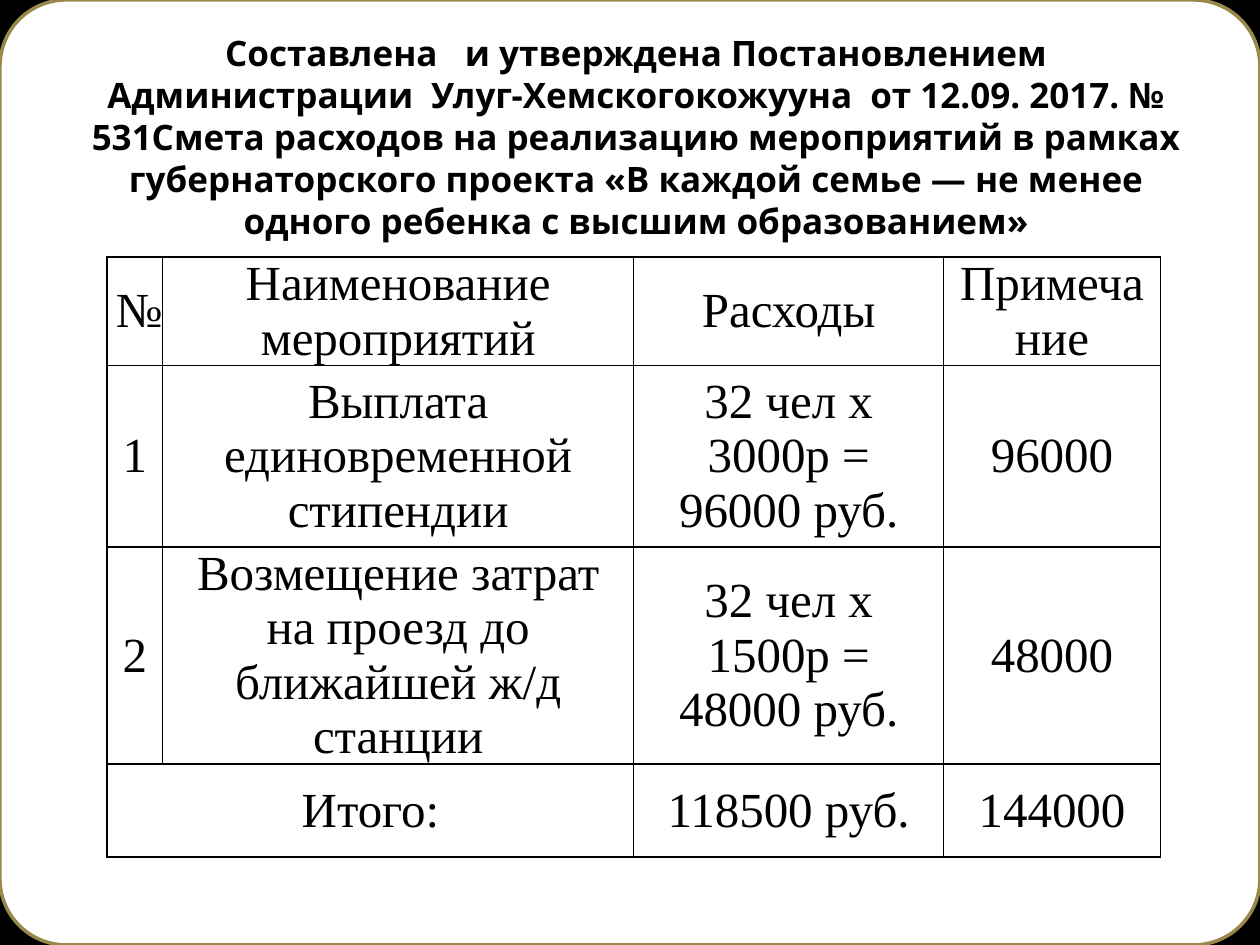
"""Build the slide with the budget table for the student grant project."""
from dataclasses import dataclass

from lxml import etree
from pptx import Presentation
from pptx.dml.color import RGBColor
from pptx.enum.shapes import MSO_SHAPE
from pptx.enum.text import MSO_ANCHOR, MSO_AUTO_SIZE, PP_ALIGN
from pptx.oxml.ns import qn
from pptx.util import Inches, Pt

ROUND = MSO_SHAPE.ROUNDED_RECTANGLE
MIDDLE = MSO_ANCHOR.MIDDLE
CENTER = PP_ALIGN.CENTER
NO_FIT = MSO_AUTO_SIZE.NONE


@dataclass(frozen=True)
class Theme:
    black: RGBColor = RGBColor(0, 0, 0)
    white: RGBColor = RGBColor(255, 255, 255)
    gold: RGBColor = RGBColor(0x98, 0x89, 0x4B)
    head: str = "Open Sans"
    body: str = "Times New Roman"
    head_size: Pt = Pt(20)
    body_size: Pt = Pt(28)
    rule: Pt = Pt(1)
    edge: Pt = Pt(2)


theme = Theme()


def style(para, face, size, bold):
    para.alignment = CENTER
    para.font.name = face
    para.font.size = size
    para.font.bold = bold
    para.font.color.rgb = theme.black


def rule(cell):
    props = cell._tc.get_or_add_tcPr()
    for i, side in enumerate(("lnL", "lnR", "lnT", "lnB")):
        line = etree.Element(qn("a:" + side), w=str(theme.rule))
        fill = etree.SubElement(line, qn("a:solidFill"))
        etree.SubElement(fill, qn("a:srgbClr"), val=str(theme.black))
        props.insert(i, line)


deck = Presentation()
deck.slide_width = Inches(10)
deck.slide_height = Inches(7.5)
slide = deck.slides.add_slide(deck.slide_layouts[5])
slide.background.fill.solid()
slide.background.fill.fore_color.rgb = theme.black

panel = slide.shapes.add_shape(ROUND, 0, 0, deck.slide_width, deck.slide_height)
panel.adjustments[0] = 0.07
panel.shadow.inherit = False
panel.fill.solid()
panel.fill.fore_color.rgb = theme.white
panel.line.color.rgb = theme.gold
panel.line.width = theme.edge

title = slide.shapes.title
title.element.addprevious(panel.element)
title.left, title.top = Inches(0.55), Inches(0.62)
title.width, title.height = Inches(9), Inches(1.25)
frame = title.text_frame
frame.text = (
    "Составлена   и утверждена Постановлением Администрации  "
    "Улуг-Хемскогокожууна  от 12.09. 2017. № 531Смета расходов на "
    "реализацию мероприятий в рамках губернаторского проекта "
    "«В каждой семье — не менее одного ребенка с высшим образованием»"
)
frame.word_wrap = True
frame.auto_size = NO_FIT
frame.vertical_anchor = MIDDLE
frame.margin_bottom = Inches(0.38)
style(frame.paragraphs[0], theme.head, theme.head_size, True)

rows = [
    ("№", "Наименование мероприятий", "Расходы", "Примечание"),
    ("1", "Выплата единовременной стипендии",
     "32 чел x 3000р = 96000 руб.", "96000"),
    ("2", "Возмещение затрат на проезд до ближайшей ж/д станции",
     "32 чел x 1500р = 48000 руб.", "48000"),
    ("Итого:", "", "118500 руб.", "144000"),
]
widths = (0.44, 3.74, 2.46, 1.72)
heights = (0.74, 1.44, 1.44, 0.74)

table = slide.shapes.add_table(
    len(rows), len(widths), Inches(0.85), Inches(2.04),
    Inches(sum(widths)), Inches(sum(heights))).table
table.first_row = False
table.horz_banding = False
for col, width in zip(table.columns, widths):
    col.width = Inches(width)
for row, height, texts in zip(table.rows, heights, rows):
    row.height = Inches(height)
    for cell, text in zip(row.cells, texts):
        cell.text = text
        cell.vertical_anchor = MIDDLE
        cell.margin_left = cell.margin_right = Inches(0.07)
        cell.margin_top = cell.margin_bottom = 0
        cell.fill.background()
        rule(cell)
        style(cell.text_frame.paragraphs[0], theme.body, theme.body_size, False)
table.cell(3, 0).merge(table.cell(3, 1))

deck.save("out.pptx")
